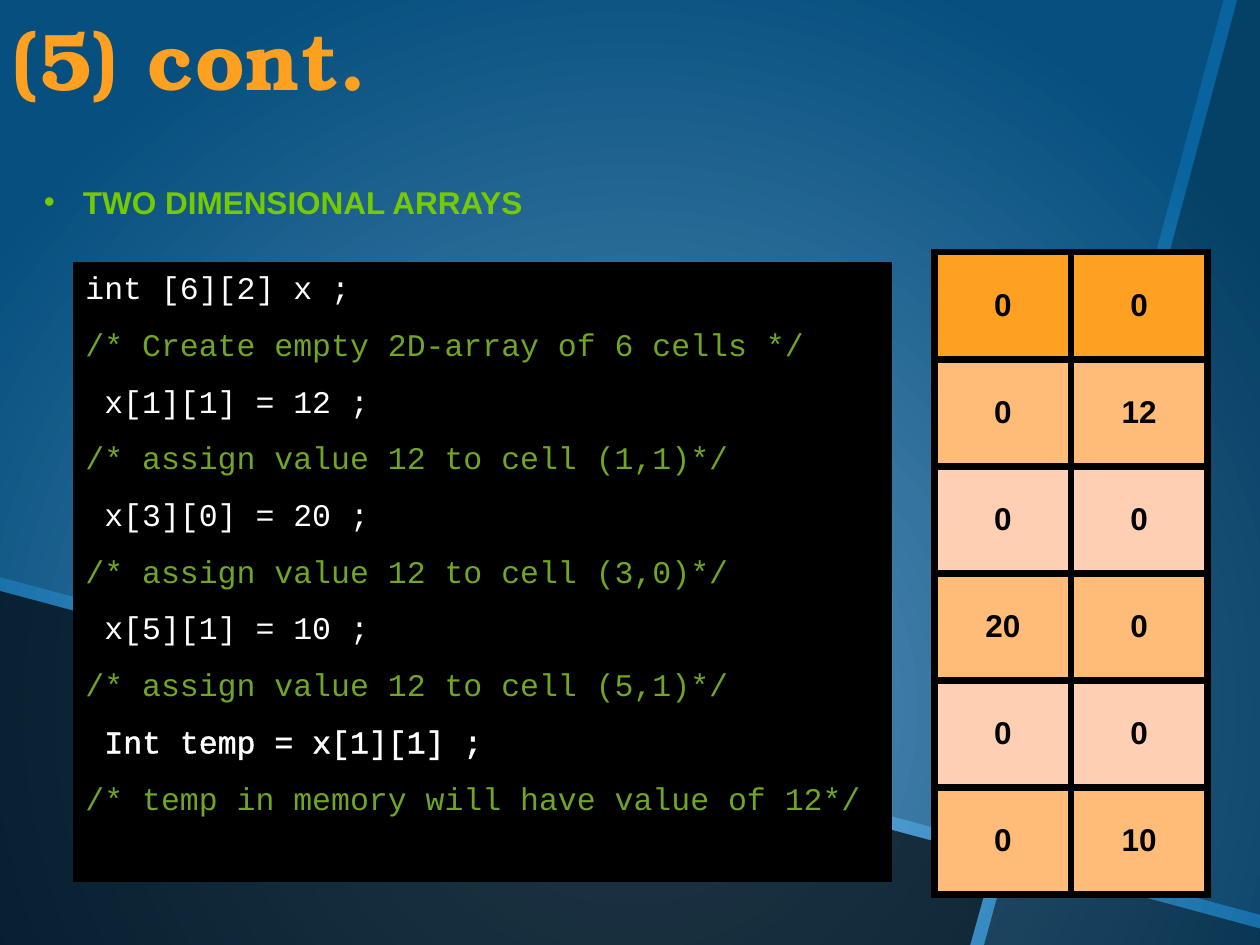
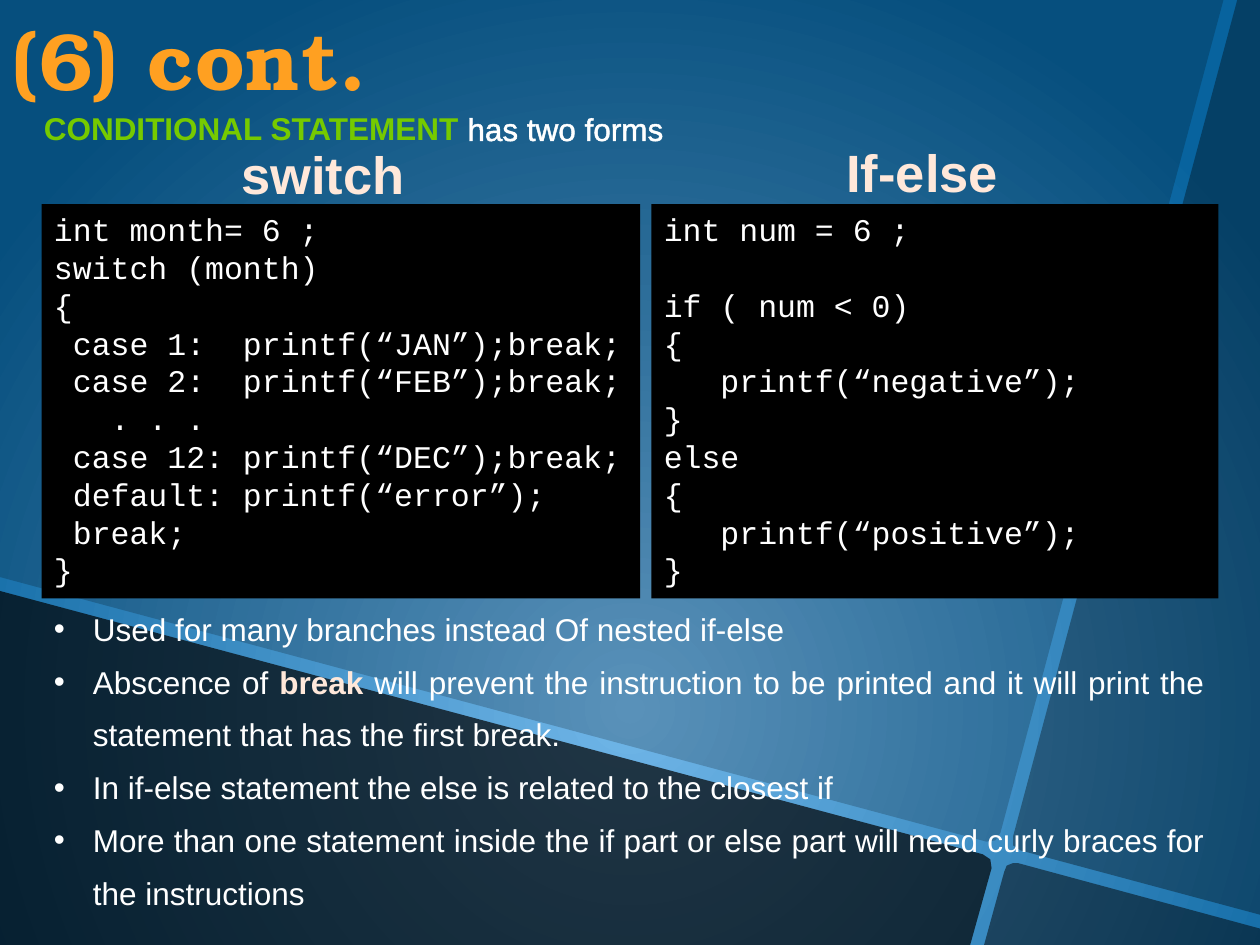
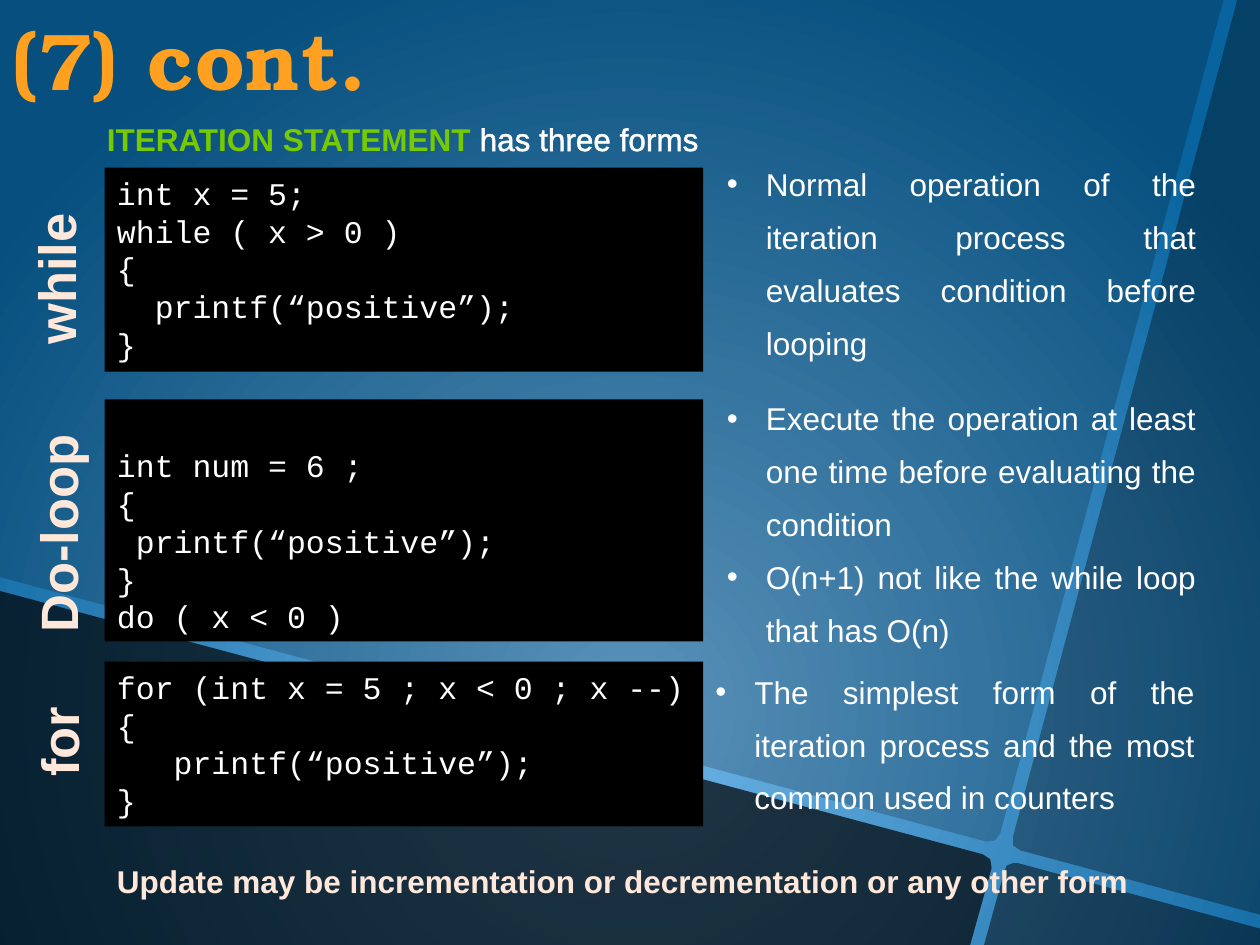
"""Build three programming slides on arrays, conditions and loops."""
from lxml.etree import SubElement
from pptx import Presentation
from pptx.dml.color import RGBColor
from pptx.enum.text import MSO_ANCHOR, PP_ALIGN
from pptx.enum.shapes import MSO_SHAPE
from pptx.oxml.ns import qn
from pptx.util import Inches, Pt

COLORS = {
    "glow": "70B6E8", "deep": "08639E", "black": "000000", "white": "FFFFFF",
    "title": "FFA021", "green": "76CA00", "green_edge": "548412",
    "comment": "70A525", "peach": "FFE8DA", "orange_edge": "FF980D",
    "first_row": "FEA022", "odd_row": "FFBC78", "even_row": "FFCFB3",
}
ROLES = {
    "body": ("white", False, None),
    "comment": ("comment", False, None),
    "outlined": ("white", False, ("white", 1.45)),
    "term": ("green", True, ("green_edge", 0.71)),
    "highlight": ("peach", True, ("orange_edge", 1.93)),
    "title": ("title", True, None),
    "cell": ("black", True, None),
}
PANELS = [
    (20, [(0, 0), (9.71, 0), (7.94, 6.61), (7.9, 6.67), (7.83, 6.68), (0, 4.58)]),
    (70, [(0, 4.69), (7.8, 6.78), (7.86, 6.82), (7.87, 6.89), (7.7, 7.5), (0, 7.5)]),
    (50, [(8.04, 6.85), (8.08, 6.85), (10, 7.37), (10, 7.5), (7.81, 7.5),
          (7.97, 6.92), (7.99, 6.87)]),
    (35, [(9.82, 0), (10, 0), (10, 7.26), (8.1, 6.75), (8.04, 6.71), (8.04, 6.64)]),
]
CODE_LINE = Pt(21.6)


def rgb(name):
    return RGBColor.from_string(COLORS[name])


def add_solid(parent, name):
    fill = SubElement(parent, qn("a:solidFill"))
    SubElement(fill, qn("a:srgbClr"), val=COLORS[name])


class Deck:
    """Holds the shared style and the current slide."""

    def __init__(self):
        self.prs = Presentation()
        self.prs.slide_width, self.prs.slide_height = Inches(10), Inches(7.5)
        self.slide = None
        self.paint_background()

    def paint_background(self):
        master = self.prs.slide_master
        fill = master.background.fill
        fill.gradient()
        for stop, name in zip(fill.gradient_stops, ("glow", "deep")):
            stop.color.rgb = rgb(name)
        linear = next(master.element.cSld.iter(qn("a:lin")))
        gradient = linear.getparent()
        gradient.remove(linear)
        circle = SubElement(gradient, qn("a:path"), path="circle")
        SubElement(circle, qn("a:fillToRect"), l="50000", t="50000", r="50000", b="0")

    def add_panels(self):
        tree = self.prs.slide_master.shapes.element
        for index, (opacity, points) in enumerate(PANELS):
            corners = [(Inches(x), Inches(y)) for x, y in points]
            builder = self.slide.shapes.build_freeform(*corners[0])
            builder.add_line_segments(corners[1:])
            panel = builder.convert_to_shape()
            self.paint(panel, "black")
            color = next(panel.element.spPr.iter(qn("a:srgbClr")))
            SubElement(color, qn("a:alpha"), val=str(opacity * 1000))
            panel.element.nvSpPr.cNvPr.set("id", str(100 + index))
            tree.insert(2 + index, panel.element)

    def paint(self, shape, name):
        shape.shadow.inherit = False
        shape.fill.solid()
        shape.fill.fore_color.rgb = rgb(name)
        shape.line.fill.background()

    def add_words(self, paragraph, text, role, size=18, font="Arial"):
        color, bold, outline = ROLES[role]
        run = paragraph.add_run()
        run.text = text
        run.font.name, run.font.size, run.font.bold = font, Pt(size), bold
        run.font.color.rgb = rgb(color)
        properties = run._r.get_or_add_rPr()
        if outline:
            edge, width = outline
            line = SubElement(properties, qn("a:ln"), w=str(Pt(width)))
            add_solid(line, edge)
            properties.insert(0, line)
        return properties

    def new_slide(self, title):
        self.slide = self.prs.slides.add_slide(self.prs.slide_layouts[5])
        if len(self.prs.slides) == 1:
            self.add_panels()
        holder = self.slide.shapes.title
        holder.left, holder.top = Inches(0), Inches(0)
        holder.width, holder.height = Inches(10), Inches(0.92)
        holder.text_frame.vertical_anchor = MSO_ANCHOR.MIDDLE
        paragraph = holder.text_frame.paragraphs[0]
        paragraph.alignment = PP_ALIGN.LEFT
        paragraph.line_spacing = Pt(56)
        self.add_words(paragraph, title, "title", 46, "TeX Gyre Bonum").set("spc", "50")

    def text(self, box, paragraphs, spacing=1.4, bullets=True):
        frame = self.slide.shapes.add_textbox(*map(Inches, box)).text_frame
        frame.word_wrap = True
        for index, runs in enumerate(paragraphs):
            paragraph = frame.add_paragraph() if index else frame.paragraphs[0]
            paragraph.alignment = PP_ALIGN.JUSTIFY
            paragraph.line_spacing = spacing
            if bullets:
                properties = paragraph._p.get_or_add_pPr()
                properties.set("marL", str(Inches(0.31)))
                properties.set("indent", str(-Inches(0.31)))
                SubElement(properties, qn("a:buFont"), typeface="Arial")
                SubElement(properties, qn("a:buChar"), char="•")
            for text, role in runs:
                self.add_words(paragraph, text, role)

    def notes(self, box, *sentences):
        self.text(box, [[(sentence, "body")] for sentence in sentences])

    def heading(self, box, text, rotation=0):
        label = self.slide.shapes.add_textbox(*map(Inches, box))
        label.rotation = rotation
        label.text_frame.word_wrap = False
        paragraph = label.text_frame.paragraphs[0]
        paragraph.alignment = PP_ALIGN.CENTER
        self.add_words(paragraph, text, "highlight", 30)

    def code(self, box, source, spacing=1.0, outlined=(), anchor=MSO_ANCHOR.TOP):
        panel = self.slide.shapes.add_shape(MSO_SHAPE.RECTANGLE, *map(Inches, box))
        self.paint(panel, "black")
        frame = panel.text_frame
        frame.word_wrap = True
        frame.vertical_anchor = anchor
        paragraph, gap = None, False
        for line in source.split("\n"):
            if not line:
                gap = True
                continue
            if paragraph is None:
                paragraph = frame.paragraphs[0]
            else:
                paragraph = frame.add_paragraph()
                paragraph.line_spacing = spacing
            if gap:
                paragraph.space_before = CODE_LINE
                gap = False
            paragraph.alignment = PP_ALIGN.LEFT
            role = "comment" if line.startswith("/*") else "body"
            self.add_words(paragraph, line, "outlined" if line in outlined else role,
                           font="Courier New")

    def grid(self, left, top, column_width, row_height, values, fills):
        rows, columns = len(values), len(values[0])
        table = self.slide.shapes.add_table(
            rows, columns, Inches(left), Inches(top),
            Inches(column_width * columns), Inches(row_height * rows)).table
        table.first_row = table.horz_banding = False
        for row, (numbers, fill) in enumerate(zip(values, fills)):
            for column, number in enumerate(numbers):
                cell = table.cell(row, column)
                cell.vertical_anchor = MSO_ANCHOR.MIDDLE
                cell.fill.solid()
                cell.fill.fore_color.rgb = rgb(fill)
                properties = cell._tc.get_or_add_tcPr()
                for index, side in enumerate(("lnL", "lnR", "lnT", "lnB")):
                    border = SubElement(properties, qn("a:" + side), w=str(Pt(4.5)))
                    add_solid(border, "black")
                    properties.insert(index, border)
                paragraph = cell.text_frame.paragraphs[0]
                paragraph.alignment = PP_ALIGN.CENTER
                self.add_words(paragraph, str(number), "cell")


def arrays(deck):
    deck.new_slide("(5) cont.")
    deck.text((0.25, 1.25, 9.08, 0.53), [[("TWO DIMENSIONAL ARRAYS", "term")]], 1.5)
    deck.grid(7.42, 2, 1.08, 0.85,
              [(0, 0), (0, 12), (0, 0), (20, 0), (0, 0), (0, 10)],
              ["first_row"] + ["odd_row", "even_row"] * 2 + ["odd_row"])
    deck.code((0.58, 2.08, 6.5, 4.92), """int [6][2] x ;
/* Create empty 2D-array of 6 cells */
 x[1][1] = 12 ;
/* assign value 12 to cell (1,1)*/
 x[3][0] = 20 ;
/* assign value 12 to cell (3,0)*/
 x[5][1] = 10 ;
/* assign value 12 to cell (5,1)*/
 Int temp = x[1][1] ;
/* temp in memory will have value of 12*/""", 1.5, (" Int temp = x[1][1] ;",))


def conditions(deck):
    deck.new_slide("(6) cont.")
    deck.text((0.25, 0.67, 9, 0.53),
              [[("CONDITIONAL STATEMENT ", "term"), ("has two forms", "outlined")]],
              1.5, False)
    deck.code((0.33, 1.62, 4.75, 3.13), """int month= 6 ;
switch (month)
{
 case 1:  printf(“JAN”);break;
 case 2:  printf(“FEB”);break;
   . . .
 case 12: printf(“DEC”);break;
 default: printf(“error”);
 break;
}""")
    deck.code((5.17, 1.62, 4.5, 3.13), """int num = 6 ;

if ( num < 0)
{
   printf(“negative”);
}
else
{
   printf(“positive”);
}""")
    deck.heading((1.81, 1.08, 1.51, 0.61), "switch")
    deck.heading((6.61, 1.06, 1.42, 0.61), "If-else")
    deck.text((0.33, 4.67, 9.33, 2.63), [
        [("Used for many branches instead Of nested if-else", "body")],
        [("Abscence of ", "body"), ("break ", "highlight"),
         ("will prevent the instruction to be printed and it will print the "
          "statement that has the first break.", "body")],
        [("In if-else statement the else is related to the closest if", "body")],
        [("More than one statement inside the if part or else part will need "
          "curly braces for the instructions", "body")],
    ])


def loops(deck):
    deck.new_slide("(7) cont.")
    deck.text((0.75, 0.75, 9, 0.53),
              [[("ITERATION STATEMENT ", "term"), ("has three forms", "outlined")]],
              1.5, False)
    deck.code((0.83, 1.33, 4.75, 1.62), """int x = 5;
while ( x > 0 )
{
  printf(“positive”);
}""")
    deck.code((0.83, 3.17, 4.75, 1.92), """int num = 6 ;
{
 printf(“positive”);
}
do ( x < 0 )""", anchor=MSO_ANCHOR.BOTTOM)
    deck.code((0.83, 5.25, 4.75, 1.31), """for (int x = 5 ; x < 0 ; x --)
{
   printf(“positive”);
}""")
    deck.heading((-0.18, 1.91, 1.25, 0.61), "while", 270)
    deck.heading((-0.43, 3.93, 1.79, 0.61), "Do-loop", 270)
    deck.heading((0.09, 5.58, 0.76, 0.61), "for", 270)
    deck.notes((5.67, 1.14, 3.92, 1.78),
               "Normal operation of the iteration process that evaluates "
               "condition before looping")
    deck.notes((5.67, 3, 3.92, 2.2),
               "Execute the operation at least one time before evaluating the condition",
               "O(n+1) not like the while loop that has O(n)")
    deck.notes((5.58, 5.17, 4, 1.35),
               "The simplest form of the iteration process and the most common "
               "used in counters")
    deck.text((0.83, 6.67, 8.75, 0.5),
              [[("Update may be incrementation or decrementation or any other form",
                 "highlight")]], bullets=False)


def main():
    deck = Deck()
    for build in (arrays, conditions, loops):
        build(deck)
    deck.prs.save("out.pptx")


if __name__ == "__main__":
    main()
